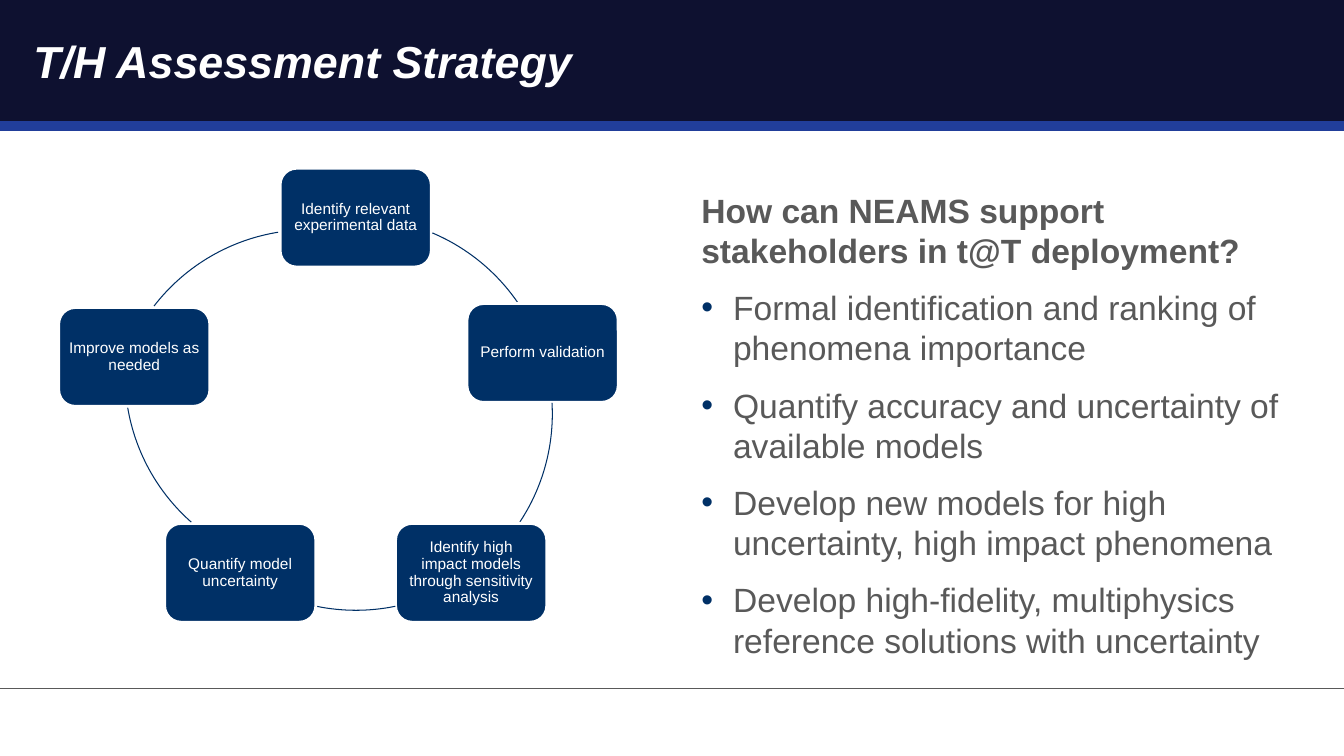
from dataclasses import dataclass

from lxml.etree import SubElement
from pptx import Presentation
from pptx.dml.color import RGBColor
from pptx.enum.shapes import MSO_CONNECTOR, MSO_SHAPE
from pptx.enum.text import MSO_ANCHOR, MSO_AUTO_SIZE, PP_ALIGN
from pptx.oxml.ns import qn
from pptx.util import Cm, Pt


@dataclass(frozen=True)
class Theme:
    """Colours, font and type sizes of the slide."""
    white: RGBColor = RGBColor(0xFF, 0xFF, 0xFF)
    band: RGBColor = RGBColor(0x0E, 0x11, 0x30)
    rule: RGBColor = RGBColor(0x21, 0x3E, 0x9A)
    grey: RGBColor = RGBColor(0x59, 0x59, 0x59)
    navy: RGBColor = RGBColor(0x00, 0x30, 0x66)
    font: str = "Arial"
    title_size: Pt = Pt(32)
    body_size: Pt = Pt(24)
    step_size: Pt = Pt(11)


THEME = Theme()
SLIDE_WIDTH, SLIDE_HEIGHT = Cm(33.87), Cm(19.05)
STEP_WIDTH, STEP_HEIGHT = Cm(3.81), Cm(2.49)
CIRCLE_SIZE = Cm(9.9)
ADJUSTMENT_PER_DEGREE = 0.6

QUESTION = "How can NEAMS support stakeholders in t@T deployment?"
ANSWERS = [
    "Formal identification and ranking of phenomena importance",
    "Quantify accuracy and uncertainty of available models",
    "Develop new models for high uncertainty, high impact phenomena",
    "Develop high-fidelity, multiphysics reference solutions with uncertainty",
]
STEPS = [
    ("Identify relevant experimental data", 7.06, 4.24),
    ("Perform validation", 11.77, 7.65),
    ("Identify high impact models through sensitivity analysis", 9.97, 13.19),
    ("Quantify model uncertainty", 4.15, 13.19),
    ("Improve models as needed", 1.48, 7.75),
]
ARCS = [
    (4.02, 5.48, 292.9, 325.7),
    (4.02, 5.48, 356.8, 33.4),
    (4.02, 5.48, 78.4, 101.6),
    (3.15, 4.5, 131.5, 170.5),
    (2.85, 5.79, 217.7, 260.8),
]


def style_font(paragraph, size, color, bold=False, italic=False):
    """Set the font of a whole paragraph."""
    font = paragraph.font
    font.name, font.size = THEME.font, size
    font.bold, font.italic = bold, italic
    font.color.rgb = color


def set_margins(frame, margin):
    """Give all four sides of a text frame the same margin."""
    frame.margin_left = frame.margin_right = margin
    frame.margin_top = frame.margin_bottom = margin


def place(shape, left, top, width, height):
    """Move and size a placeholder."""
    shape.left, shape.top = Cm(left), Cm(top)
    shape.width, shape.height = Cm(width), Cm(height)


def add_band(slide):
    """Draw the dark title band behind the placeholders."""
    band = slide.shapes.add_shape(MSO_SHAPE.RECTANGLE, 0, 0, SLIDE_WIDTH, Cm(3.18))
    band.shadow.inherit = False
    band.fill.solid()
    band.fill.fore_color.rgb = THEME.band
    band.line.fill.background()
    band.element.getparent().insert(2, band.element)


def add_rule(slide, top, color, width):
    """Draw a horizontal rule across the slide."""
    rule = slide.shapes.add_connector(
        MSO_CONNECTOR.STRAIGHT, 0, Cm(top), SLIDE_WIDTH, Cm(top))
    rule.line.color.rgb = color
    rule.line.width = Pt(width)
    SubElement(rule.element.spPr, qn("a:effectLst"))


def fill_title(title):
    """Write the slide title."""
    place(title, 0.84, 0.84, 32.46, 1.9)
    frame = title.text_frame
    frame.text = "T/H Assessment Strategy"
    frame.auto_size = MSO_AUTO_SIZE.NONE
    frame.vertical_anchor = MSO_ANCHOR.TOP
    set_margins(frame, 0)
    paragraph = frame.paragraphs[0]
    paragraph.alignment = PP_ALIGN.LEFT
    paragraph.line_spacing = 1.0
    style_font(paragraph, THEME.title_size, THEME.white, bold=True, italic=True)


def set_bullet(paragraph, bulleted):
    """Give a paragraph a hanging bullet, or none."""
    properties = paragraph._p.get_or_add_pPr()
    indent = Cm(0.8) if bulleted else 0
    properties.set("marL", str(indent))
    properties.set("indent", str(-indent))
    if bulleted:
        color = SubElement(properties, qn("a:buClr"))
        SubElement(color, qn("a:srgbClr"), val=str(THEME.navy))
        SubElement(properties, qn("a:buFont"), typeface=THEME.font)
        SubElement(properties, qn("a:buChar"), char="•")
    else:
        SubElement(properties, qn("a:buNone"))


def fill_body(body):
    """Write the question and its bulleted answers."""
    place(body, 17.42, 4.65, 15.16, 13.36)
    frame = body.text_frame
    frame.text = "\n".join([QUESTION, *ANSWERS])
    frame.auto_size = MSO_AUTO_SIZE.NONE
    for number, paragraph in enumerate(frame.paragraphs):
        set_bullet(paragraph, number > 0)
        paragraph.line_spacing = 1.0
        paragraph.space_before, paragraph.space_after = Pt(0), Pt(12)
        style_font(paragraph, THEME.body_size, THEME.grey, bold=number == 0)


def add_step(slide, text, left, top):
    """Draw one rounded step of the cycle."""
    step = slide.shapes.add_shape(
        MSO_SHAPE.ROUNDED_RECTANGLE, Cm(left), Cm(top), STEP_WIDTH, STEP_HEIGHT)
    step.shadow.inherit = False
    step.fill.solid()
    step.fill.fore_color.rgb = THEME.navy
    step.line.color.rgb = THEME.white
    step.line.width = Pt(2)
    frame = step.text_frame
    frame.text = text
    frame.word_wrap = True
    frame.vertical_anchor = MSO_ANCHOR.MIDDLE
    set_margins(frame, Cm(0.12))
    paragraph = frame.paragraphs[0]
    paragraph.alignment = PP_ALIGN.CENTER
    paragraph.line_spacing = 0.9
    style_font(paragraph, THEME.step_size, THEME.white)


def add_arc(slide, left, top, start, end):
    """Draw the arc between two steps, with angles in degrees clockwise."""
    arc = slide.shapes.add_shape(
        MSO_SHAPE.ARC, Cm(left), Cm(top), CIRCLE_SIZE, CIRCLE_SIZE)
    arc.adjustments[0] = start * ADJUSTMENT_PER_DEGREE
    arc.adjustments[1] = end * ADJUSTMENT_PER_DEGREE
    arc.shadow.inherit = False
    arc.fill.background()
    arc.line.color.rgb = THEME.navy
    arc.line.width = Pt(0.75)


def main():
    """Build the slide and save it."""
    presentation = Presentation()
    presentation.slide_width, presentation.slide_height = SLIDE_WIDTH, SLIDE_HEIGHT
    slide = presentation.slides.add_slide(presentation.slide_layouts[1])
    add_band(slide)
    add_rule(slide, 3.18, THEME.rule, 6.75)
    add_rule(slide, 17.35, THEME.grey, 1)
    fill_title(slide.shapes.title)
    fill_body(slide.placeholders[1])
    for step, arc in zip(STEPS, ARCS):
        add_step(slide, *step)
        add_arc(slide, *arc)
    presentation.save("out.pptx")


if __name__ == "__main__":
    main()
